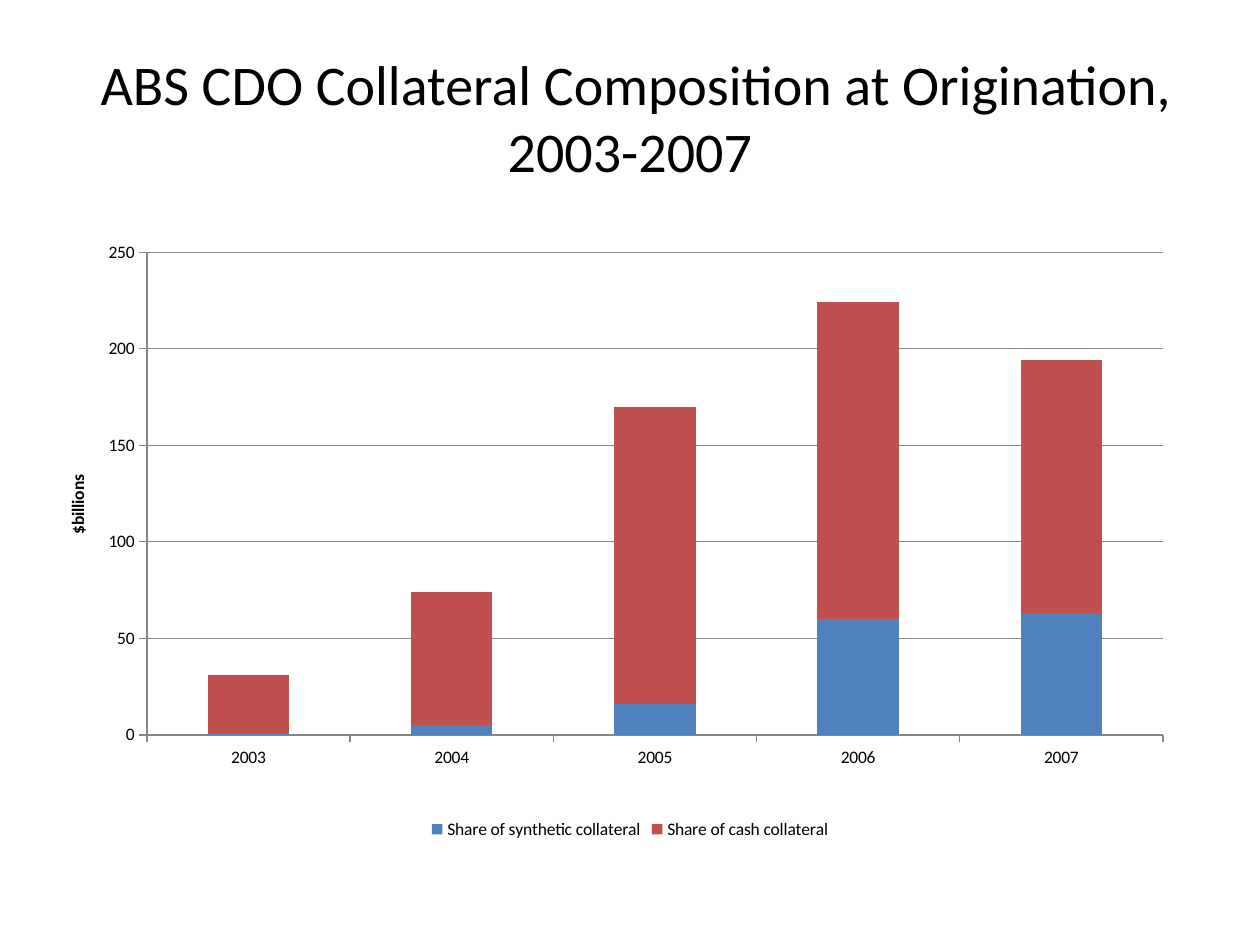
from lxml import etree
from pptx import Presentation
from pptx.chart.data import CategoryChartData
from pptx.dml.color import RGBColor
from pptx.enum import chart as ch, text as tx
from pptx.util import Pt

FONT = "Calibri"
HUES = {"ink": "000000", "grid": "868686", "synth": "4F81BD", "cash": "C0504D"}
YEARS = ["2003", "2004", "2005", "2006", "2007"]
SHARES = [
    ("Share of synthetic collateral", "synth", [1, 5, 16, 60, 63]),
    ("Share of cash collateral", "cash", [30, 69, 154, 164, 131]),
]
PLOT = {"x": 0.074, "y": 0.051, "w": 0.896, "h": 0.774}


def hue(name):
    return RGBColor.from_string(HUES[name])


def style(font, size, bold=False):
    font.name, font.size, font.bold = FONT, Pt(size), bold
    font.color.rgb = hue("ink")


def write(frame, words, size, bold=False, align=tx.PP_ALIGN.CENTER):
    para = frame.paragraphs[0]
    para.alignment = align
    run = para.add_run()
    run.text = words
    style(run.font, size, bold)


def rule(line):
    line.color.rgb = hue("grid")
    line.width = Pt(0.75)


def fix_plot(chart):
    """Pin the inner plot area to the fractions in PLOT."""
    area = chart._chartSpace.chart.plotArea
    ns = "{%s}" % area.nsmap["c"]
    for old in area.findall(ns + "layout"):
        area.remove(old)
    layout = etree.Element(ns + "layout")
    area.insert(0, layout)
    manual = etree.SubElement(layout, ns + "manualLayout")
    parts = [("layoutTarget", "inner"), ("xMode", "edge"), ("yMode", "edge")]
    for tag, val in parts + list(PLOT.items()):
        etree.SubElement(manual, ns + tag).set("val", str(val))


def add_title(slide, left, top, width, height):
    title = slide.shapes.title
    title.left, title.top = Pt(left), Pt(top)
    title.width, title.height = Pt(width), Pt(height)
    frame = title.text_frame
    frame.word_wrap = True
    frame.auto_size = tx.MSO_AUTO_SIZE.NONE
    frame.vertical_anchor = tx.MSO_ANCHOR.MIDDLE
    write(frame, " ABS CDO Collateral Composition at Origination, 2003-2007", 32)


def add_bars(slide, left, top, width, height):
    data = CategoryChartData(number_format="#,##0")
    data.categories = YEARS
    for name, _, vals in SHARES:
        data.add_series(name, vals)
    chart = slide.shapes.add_chart(
        ch.XL_CHART_TYPE.COLUMN_STACKED,
        Pt(left), Pt(top), Pt(width), Pt(height), data).chart
    style(chart.font, 10)
    chart.has_title = False

    plot = chart.plots[0]
    plot.vary_by_categories = False
    plot.gap_width, plot.overlap = 150, 100
    for bar, (_, key, _) in zip(plot.series, SHARES):
        bar.format.fill.solid()
        bar.format.fill.fore_color.rgb = hue(key)

    years, money = chart.category_axis, chart.value_axis
    for axis in (years, money):
        axis.major_tick_mark = ch.XL_TICK_MARK.OUTSIDE
        axis.minor_tick_mark = ch.XL_TICK_MARK.NONE
        rule(axis.format.line)
    money.minimum_scale, money.maximum_scale, money.major_unit = 0, 250, 50
    money.has_major_gridlines = True
    rule(money.major_gridlines.format.line)
    money.tick_labels.number_format = "#,##0"
    money.tick_labels.number_format_is_linked = False
    write(money.axis_title.text_frame, "$billions", 10, bold=True)

    chart.has_legend = True
    chart.legend.position = ch.XL_LEGEND_POSITION.BOTTOM
    chart.legend.include_in_layout = False
    fix_plot(chart)


def main():
    deck = Presentation()
    deck.slide_width, deck.slide_height = Pt(720), Pt(540)
    slide = deck.slides.add_slide(deck.slide_layouts[5])
    add_title(slide, 36, 21.6, 648, 90)
    add_bars(slide, 36, 126, 648, 356.4)
    deck.save("out.pptx")


if __name__ == "__main__":
    main()
